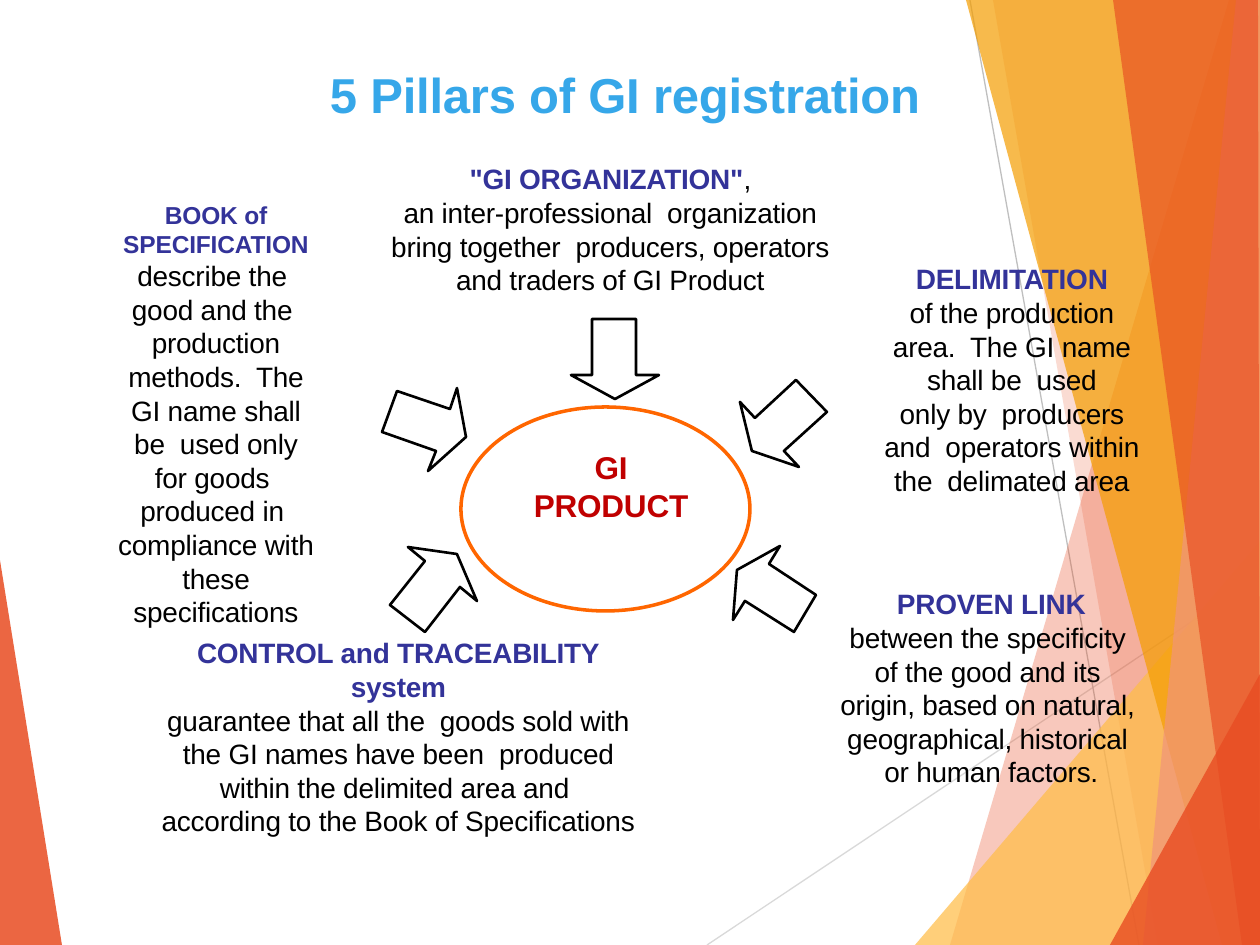
from lxml.etree import SubElement
from pptx import Presentation
from pptx.dml.color import RGBColor
from pptx.enum.shapes import MSO_CONNECTOR, MSO_SHAPE
from pptx.enum.text import MSO_ANCHOR, PP_ALIGN
from pptx.oxml.ns import qn
from pptx.util import Pt

SCALE = 914400 / 126
WHITE = RGBColor(0xFF, 0xFF, 0xFF)
BLACK = RGBColor(0x00, 0x00, 0x00)
RED_ORANGE = RGBColor(0xE8, 0x4C, 0x22)
AMBER = RGBColor(0xFF, 0xBD, 0x47)
GOLD = RGBColor(0xF4, 0x9D, 0x00)
SALMON = RGBColor(0xF1, 0x94, 0x7A)
LIGHT_GRAY = RGBColor(0xD9, 0xD9, 0xD9)
GRAY = RGBColor(0xBF, 0xBF, 0xBF)
SKY = RGBColor(0x36, 0xA7, 0xE9)
INDIGO = RGBColor(0x33, 0x33, 0x99)
ORANGE = RGBColor(0xFF, 0x66, 0x00)
CRIMSON = RGBColor(0xC0, 0x00, 0x00)


def add_polygon(points):
    builder = page.shapes.build_freeform(*points[0], scale=SCALE)
    builder.add_line_segments(points[1:], close=True)
    polygon = builder.convert_to_shape()
    polygon.shadow.inherit = False
    return polygon


def add_span(para, text, size, color, bold):
    span = para.add_run()
    span.text = text
    span.font.name = "Arial"
    span.font.size = Pt(size)
    span.font.bold = bold
    span.font.color.rgb = color
    span.font._element.set("spc", "-10")


deck = Presentation()
deck.slide_width = round(1260 * SCALE)
deck.slide_height = round(945 * SCALE)
page = deck.slides.add_slide(deck.slide_layouts[5])

for start_x, start_y, end_x, end_y, color in [
    (707, 945, 1260, 576, LIGHT_GRAY),
    (970, 0, 1139, 945, GRAY),
]:
    ends = [round(length * SCALE) for length in (start_x, start_y, end_x, end_y)]
    line = page.shapes.add_connector(MSO_CONNECTOR.STRAIGHT, *ends)
    line.line.color.rgb = color
    line.line.width = Pt(0.75)
    SubElement(line._element.spPr, qn("a:effectLst"))

for color, opacity, points in [
    (RED_ORANGE, 85, [(0, 560), (62, 945), (0, 945)]),
    (RED_ORANGE, 30, [(1229, 0), (950, 945), (1260, 945), (1260, 0)]),
    (RED_ORANGE, 20, [(993, 0), (1158, 945), (1260, 945), (1260, 0)]),
    (AMBER, 72, [(915, 945), (1260, 541), (1260, 945)]),
    (GOLD, 70, [(966, 0), (1222, 945), (1260, 945), (1260, 0)]),
    (SALMON, 70, [(1236, 0), (1143, 945), (1260, 945), (1260, 0)]),
    (RED_ORANGE, 65, [(1113, 0), (1242, 945), (1260, 945), (1258, 0)]),
    (RED_ORANGE, 80, [(1110, 945), (1260, 674), (1260, 945)]),
]:
    facet = add_polygon(points)
    facet.fill.solid()
    facet.fill.fore_color.rgb = color
    facet.line.fill.background()
    fill_color = facet._element.spPr.find(".//" + qn("a:srgbClr"))
    SubElement(fill_color, qn("a:alpha")).set("val", str(opacity * 1000))

title = page.shapes.title
page.shapes._spTree.append(title._element)
title.left, title.top, title.width, title.height = [
    round(length * SCALE) for length in (105, 4, 1040, 180)
]
title.text_frame.vertical_anchor = MSO_ANCHOR.MIDDLE
title.text_frame.paragraphs[0].alignment = PP_ALIGN.CENTER
add_span(title.text_frame.paragraphs[0], "5 Pillars of GI registration", 28, SKY, True)

ellipse = page.shapes.add_shape(
    MSO_SHAPE.OVAL, *[round(length * SCALE) for length in (461, 407, 289, 204)]
)
ellipse.shadow.inherit = False
ellipse.fill.solid()
ellipse.fill.fore_color.rgb = WHITE
ellipse.line.color.rgb = ORANGE
ellipse.line.width = Pt(2)

for points in [
    [(659, 375), (636, 375), (636, 319), (592, 319), (592, 375), (571, 375), (615, 399)],
    [(799, 467), (784, 451), (827, 412), (796, 380), (755, 418), (740, 402), (752, 451)],
    [(408, 547), (425, 561), (390, 605), (425, 632), (460, 587), (477, 601), (457, 554)],
    [(457, 388), (450, 409), (397, 391), (382, 432), (436, 451), (428, 471), (466, 437)],
    [(780, 546), (769, 564), (816, 595), (794, 632), (745, 601), (733, 620), (737, 570)],
]:
    arrow = add_polygon(points)
    arrow.fill.background()
    arrow.line.color.rgb = BLACK
    arrow.line.width = Pt(1.5)

BOOK = ("BOOK of SPECIFICATION", 14, INDIGO, True)
ORGANIZATION = ('"GI ORGANIZATION"', 16, INDIGO, True)
for bounds, paragraphs in [
    ((116, 199, 256, 333), [
        [BOOK],
        [("describe the  good and the  production methods.  The GI name shall be  used "
          "only for goods  produced in  compliance with these specifications",
          16, BLACK, False)],
    ]),
    ((377, 161, 467, 138), [
        [ORGANIZATION, (",", 16, BLACK, False)],
        [("an inter-professional  organization bring together  producers, operators "
          "and traders of GI Product", 16, BLACK, False)],
    ]),
    ((879, 261, 266, 239), [
        [("DELIMITATION", 16, INDIGO, True)],
        [("of the production area.  The GI name shall be  used", 16, BLACK, False)],
        [("only by  producers and  operators within the  delimated area",
          16, BLACK, False)],
    ]),
    ((157, 635, 483, 205), [
        [("CONTROL and TRACEABILITY", 16, INDIGO, True)],
        [("system", 16, INDIGO, True)],
        [("guarantee that all the  goods sold with the GI names have been  produced "
          "within the delimited area and  according to the Book of Specifications",
          16, BLACK, False)],
    ]),
    ((839, 586, 305, 205), [
        [("PROVEN LINK", 16, INDIGO, True)],
        [("between the specificity  of the good and its  origin, based on natural,  "
          "geographical, historical  or human factors.", 16, BLACK, False)],
    ]),
    ((483, 447, 256, 80), [
        [("GI", 18, CRIMSON, True)],
        [("PRODUCT", 18, CRIMSON, True)],
    ]),
]:
    box = page.shapes.add_textbox(*[round(length * SCALE) for length in bounds])
    frame = box.text_frame
    frame.word_wrap = True
    frame.margin_left = frame.margin_right = frame.margin_bottom = 0
    frame.margin_top = round(SCALE)
    for index, spans in enumerate(paragraphs):
        para = frame.paragraphs[0] if index == 0 else frame.add_paragraph()
        para.alignment = PP_ALIGN.CENTER
        para.space_before = Pt(1 if index == 0 else 0)
        if BOOK in spans:
            para._p.get_or_add_pPr().set("marR", str(round(56 * SCALE)))
        for span in spans:
            add_span(para, *span)

deck.save("out.pptx")
